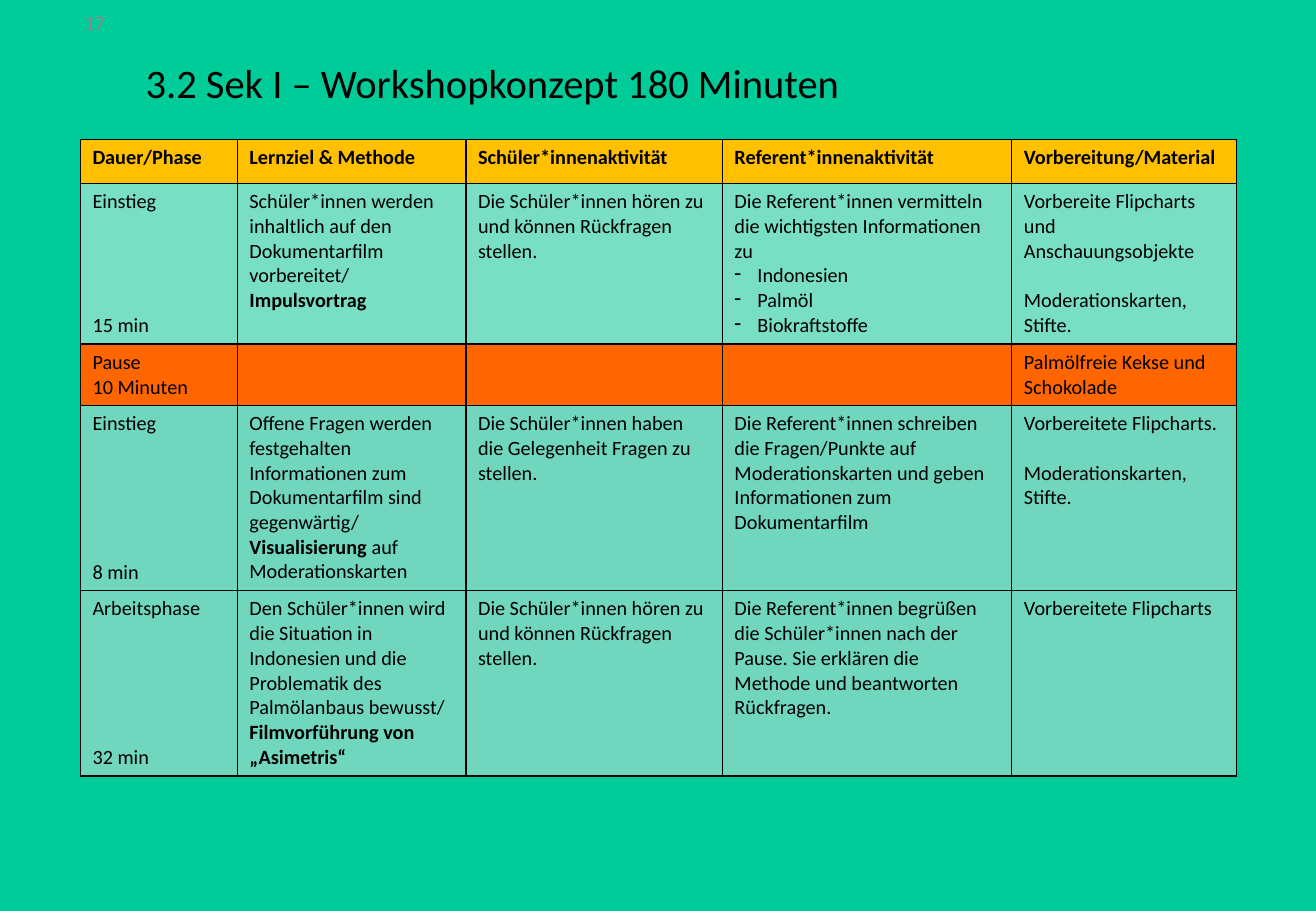
from lxml.etree import SubElement
from pptx import Presentation
from pptx.dml.color import RGBColor
from pptx.enum.text import MSO_ANCHOR, PP_ALIGN
from pptx.oxml.ns import qn
from pptx.util import Cm, Pt

FONT = "Calibri"
SIZE = 12
LINE = 14.65
COLS = (3.28, 4.78, 5.36, 6.05, 4.7)
HEAD = ("Dauer/Phase", "Lernziel & Methode", "Schüler*innenaktivität",
        "Referent*innenaktivität", "Vorbereitung/Material")
ROWS = (
    (0.92, "FFC000", 100, 0, [f"_{name}_" for name in HEAD]),
    (3.35, "F0F0F0", 50, 4, (
        "Einstieg\n15 min",
        "Schüler*innen werden inhaltlich auf den Dokumentarfilm vorbereitet/ _Impulsvortrag_",
        "Die Schüler*innen hören zu und können Rückfragen stellen.",
        "Die Referent*innen vermitteln die wichtigsten Informationen zu"
        "\n- Indonesien\n- Palmöl\n- Biokraftstoffe",
        "Vorbereite Flipcharts und Anschauungsobjekte\nModerationskarten, Stifte.")),
    (1.28, "FF6600", 100, 0, (
        "Pause\n10 Minuten", "", "", "", "Palmölfreie Kekse und Schokolade")),
    (3.87, "E1E1E1", 50, 5, (
        "Einstieg\n8 min",
        "Offene Fragen werden festgehalten Informationen zum Dokumentarfilm sind "
        "gegenwärtig/ _Visualisierung_ auf Moderationskarten",
        "Die Schüler*innen haben die Gelegenheit Fragen zu stellen.",
        "Die Referent*innen schreiben die Fragen/Punkte auf Moderationskarten "
        "und geben Informationen zum Dokumentarfilm",
        "Vorbereitete Flipcharts.\nModerationskarten, Stifte.")),
    (3.87, "E1E1E1", 50, 5, (
        "Arbeitsphase\n32 min",
        "Den Schüler*innen wird die Situation in Indonesien und die Problematik "
        "des Palmölanbaus bewusst/\n_Filmvorführung von „Asimetris“_",
        "Die Schüler*innen hören zu und können Rückfragen stellen.",
        "Die Referent*innen begrüßen die Schüler*innen nach der Pause. "
        "Sie erklären die Methode und beantworten Rückfragen.",
        "Vorbereitete Flipcharts")),
)


def paint(target, tone):
    """Give a colour format the hex tone."""
    target.rgb = RGBColor.from_string(tone)


def style(run, size, tone="000000", bold=False):
    """Format one run."""
    run.font.name = FONT
    run.font.size = Pt(size)
    run.font.bold = bold
    paint(run.font.color, tone)


def place(shape, box):
    """Move a shape to a box given in centimetres."""
    shape.left, shape.top, shape.width, shape.height = map(Cm, box)


def add_title(slide, box, text):
    """Fill the title placeholder."""
    title = slide.shapes.title
    place(title, box)
    frame = title.text_frame
    frame.text = text
    frame.word_wrap = True
    frame.vertical_anchor = MSO_ANCHOR.MIDDLE
    para = frame.paragraphs[0]
    para.alignment = PP_ALIGN.LEFT
    para.line_spacing = 0.9
    style(para.runs[0], 24)


def add_number(slide, box, text):
    """Place the page number."""
    frame = slide.shapes.add_textbox(*map(Cm, box)).text_frame
    frame.text = text
    frame.word_wrap = True
    frame.vertical_anchor = MSO_ANCHOR.MIDDLE
    frame.paragraphs[0].alignment = PP_ALIGN.CENTER
    style(frame.paragraphs[0].runs[0], SIZE, "8C8C8C")


def add_dash(para):
    """Turn a paragraph into a dash item with a hanging indent."""
    props = para._p.get_or_add_pPr()
    props.set("marL", str(Cm(0.48)))
    props.set("indent", str(-Cm(0.48)))
    SubElement(props, qn("a:buChar")).set("char", "-")


def write(cell, text, gap):
    """Write lines into a cell, with bold between underscores and a gap in lines."""
    frame = cell.text_frame
    for i, line in enumerate(text.split("\n")):
        para = frame.add_paragraph() if i else frame.paragraphs[0]
        if i and gap:
            para.space_before = Pt(gap * LINE)
        if line.startswith("- "):
            add_dash(para)
            line = line[2:]
        for j, part in enumerate(line.split("_")):
            if part:
                run = para.add_run()
                run.text = part
                style(run, SIZE, bold=j % 2 == 1)


def dress(cell, tone, alpha):
    """Give a cell black borders and a fill."""
    props = cell._tc.get_or_add_tcPr()
    for side in "LRTB":
        edge = SubElement(props, qn(f"a:ln{side}"), w=str(Pt(1)))
        fill = SubElement(edge, qn("a:solidFill"))
        SubElement(fill, qn("a:srgbClr"), val="000000")
    cell.fill.solid()
    paint(cell.fill.fore_color, tone)
    if alpha < 100:
        color = props.find(qn("a:solidFill")).find(qn("a:srgbClr"))
        SubElement(color, qn("a:alpha"), val=str(alpha * 1000))


def add_plan(slide, left, top):
    """Build the workshop table from its top left corner."""
    box = left, top, sum(COLS), sum(row[0] for row in ROWS)
    table = slide.shapes.add_table(len(ROWS), len(COLS), *map(Cm, box)).table
    table.first_row = table.horz_banding = False
    for col, width in zip(table.columns, COLS):
        col.width = Cm(width)
    for r, (height, tone, alpha, gap, texts) in enumerate(ROWS):
        table.rows[r].height = Cm(height)
        for c, (text, space) in enumerate(zip(texts, (gap, 0, 0, 0, 1))):
            cell = table.cell(r, c)
            dress(cell, tone, alpha)
            write(cell, text, space)


def main():
    """Build and save the slide."""
    deck = Presentation()
    deck.slide_width, deck.slide_height = Cm(27.51), Cm(19.05)
    slide = deck.slides.add_slide(deck.slide_layouts[5])
    slide.background.fill.solid()
    paint(slide.background.fill.fore_color, "00CC99")
    add_title(slide, (2.79, 0.91, 21.89, 1.73), "3.2 Sek I – Workshopkonzept 180 Minuten")
    add_plan(slide, 1.68, 2.92)
    add_number(slide, (-1.12, -0.03, 6.2, 1.02), "17")
    deck.save("out.pptx")


if __name__ == "__main__":
    main()
